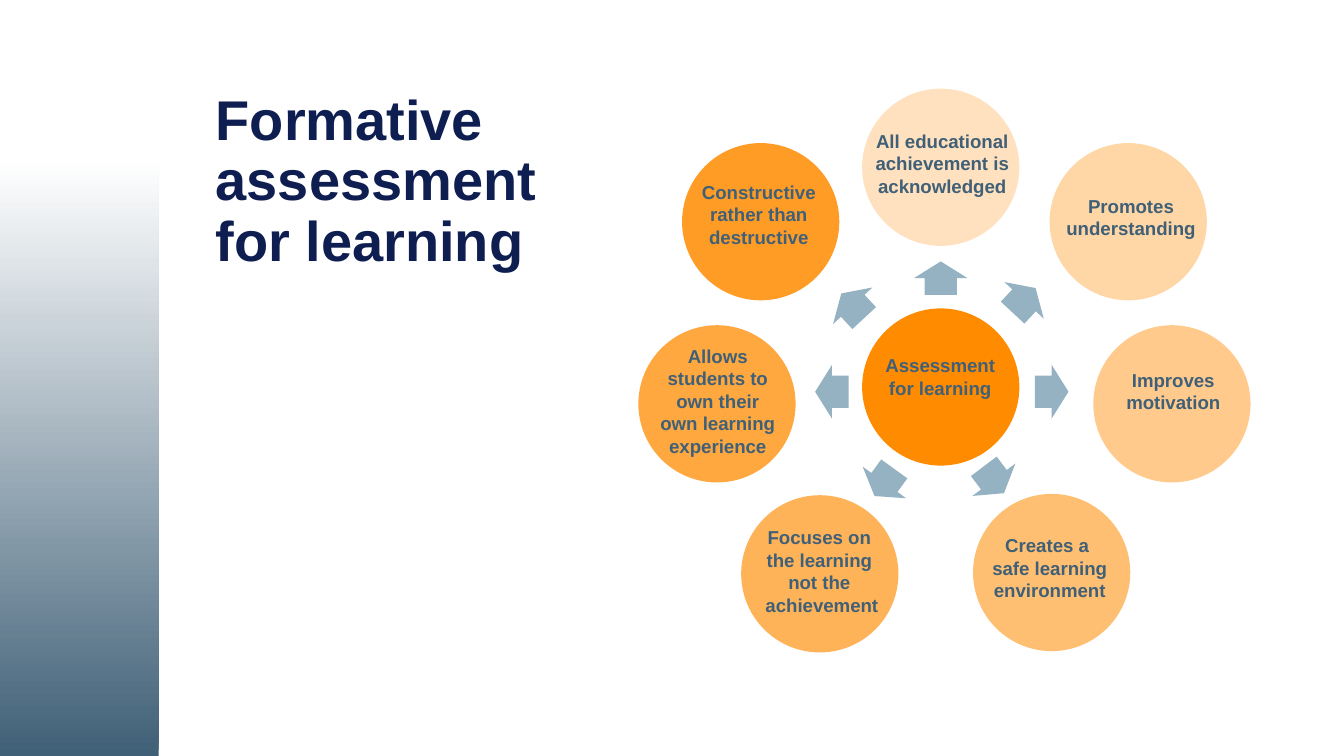
import pptx
import pptx.util
import pptx.dml.color
import pptx.enum.shapes
import pptx.enum.text
import pptx.oxml.ns
import lxml.etree

PX = 4572
KIND = pptx.enum.shapes.MSO_SHAPE
ALIGN = pptx.enum.text.PP_ALIGN
BOLD = {"name": "Arial", "bold": True}


def tint(color, code):
    color.rgb = pptx.dml.color.RGBColor.from_string(code)


def write(frame, text, size, code, align):
    frame.word_wrap = True
    frame.auto_size = pptx.enum.text.MSO_AUTO_SIZE.NONE
    frame.text = text
    para = frame.paragraphs[0]
    para.alignment = align
    form = {**BOLD, "size": pptx.util.Pt(size)}
    for run in para.runs:
        for key, value in form.items():
            setattr(run.font, key, value)
        tint(run.font.color, code)
    return para


deck = pptx.Presentation()
deck.slide_width, deck.slide_height = 2000 * PX, 1125 * PX
slide = deck.slides.add_slide(deck.slide_layouts[5])
shapes = slide.shapes

title = shapes.title
place = {"left": 301, "top": 44, "width": 748, "height": 456}
for key, value in place.items():
    setattr(title, key, value * PX)
head = write(title.text_frame, "Formative \vassessment \vfor learning", 30, "0F1E50", ALIGN.LEFT)
head.line_spacing = 0.9
title.text_frame.vertical_anchor = pptx.enum.text.MSO_ANCHOR.MIDDLE

band = shapes.add_shape(KIND.RECTANGLE, 0, 0, 236 * PX, 1125 * PX)
band.shadow.inherit = False
band.line.fill.background()
band.fill.gradient()
band.fill.gradient_angle = 90
for stop, (spot, code) in zip(band.fill.gradient_stops, [(0, "406077"), (0.79, "FFFFFF")]):
    stop.position = spot
    tint(stop.color, code)

SIZE = 234
discs = [
    (1283, 132, 25), (1562, 213, 35), (1627, 484, 45), (1448, 735, 55),
    (1103, 737, 65), (950, 484, 75), (1015, 213, 85), (1283, 459, 100),
]
for left, top, alpha in discs:
    disc = shapes.add_shape(KIND.OVAL, left * PX, top * PX, SIZE * PX, SIZE * PX)
    disc.shadow.inherit = False
    disc.line.fill.background()
    disc.fill.solid()
    tint(disc.fill.fore_color, "FF8B00")
    if alpha < 100:
        tone = disc.fill._xPr.find(".//" + pptx.oxml.ns.qn("a:srgbClr"))
        lxml.etree.SubElement(tone, pptx.oxml.ns.qn("a:alpha"), val=str(alpha * 1000))

LONG, WIDE = 50, 80
arrows = [
    (1400, 414, 270), (1524, 447, 313), (1565, 583, 0), (1479, 714, 53),
    (1316, 718, 126), (1238, 583, 180), (1269, 455, 227),
]
for mid, level, angle in arrows:
    left, top = (mid - LONG // 2) * PX, (level - WIDE // 2) * PX
    arrow = shapes.add_shape(KIND.RIGHT_ARROW, left, top, LONG * PX, WIDE * PX)
    arrow.adjustments[0] = 0.6
    arrow.adjustments[1] = 0.5
    arrow.rotation = angle
    arrow.shadow.inherit = False
    arrow.line.fill.background()
    arrow.fill.solid()
    tint(arrow.fill.fore_color, "95B2C2")

labels = [
    (1248, 183, 308, 182, "All educational achievement is acknowledged"),
    (1529, 280, 308, 148, "Promotes understanding"),
    (1592, 539, 308, 148, "Improves motivation"),
    (1408, 785, 308, 182, "Creates a \vsafe learning environment"),
    (1069, 773, 308, 216, "Focuses on \vthe learning \vnot the \vachievement"),
    (956, 503, 224, 250, "Allows students to own their own learning experience"),
    (1017, 259, 224, 182, "Constructive rather than destructive"),
    (1287, 517, 224, 148, "Assessment for learning"),
]
for left, top, width, height, text in labels:
    box = shapes.add_textbox(left * PX, top * PX, width * PX, height * PX)
    write(box.text_frame, text, 10, "406077", ALIGN.CENTER)

deck.save("out.pptx")
